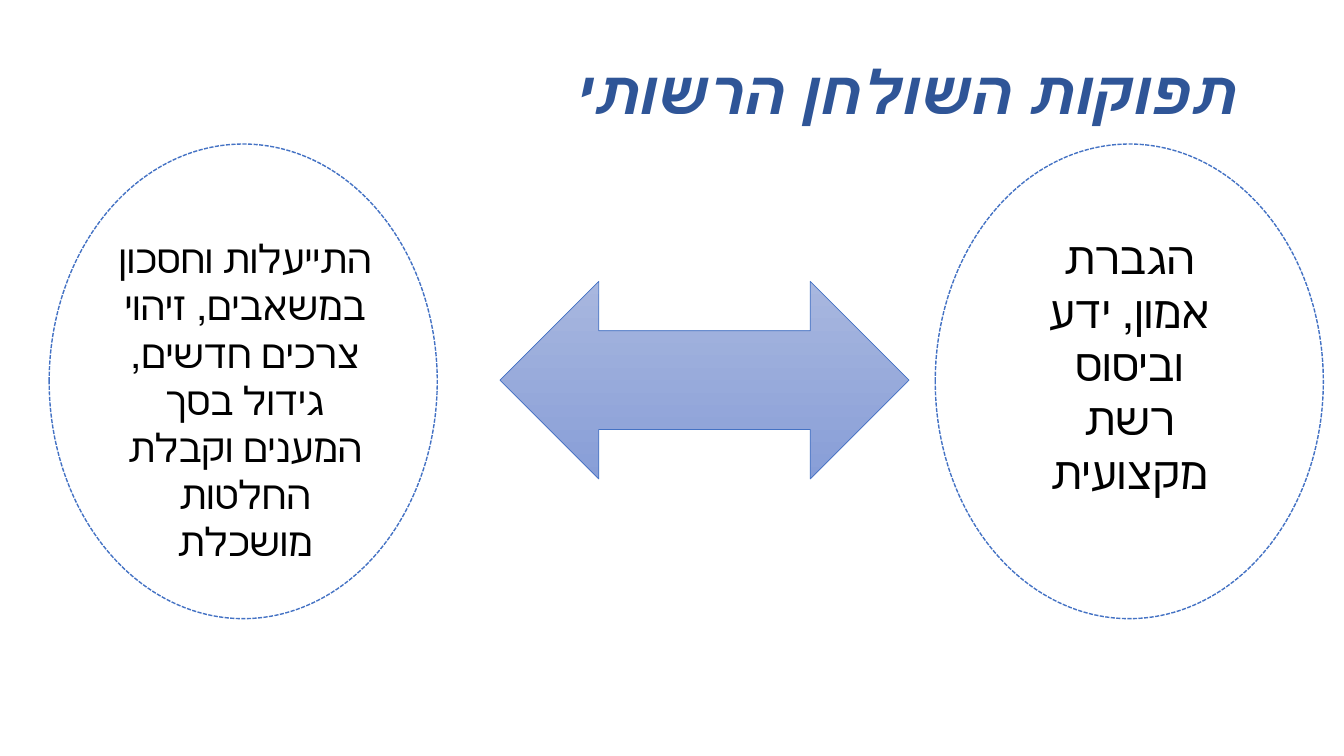
from dataclasses import dataclass

from pptx import Presentation
from pptx import util as u
from pptx.dml.color import RGBColor
from pptx.enum import dml, shapes, text

BLUE = "4472C4"
OVAL_TOP, OVAL_WIDTH, OVAL_HEIGHT = 3.63, 9.78, 11.96


@dataclass
class Box:
    left: float
    top: float
    width: float
    height: float

    def lengths(self) -> tuple:
        return tuple(u.Cm(v) for v in (self.left, self.top, self.width, self.height))


@dataclass
class Outcome:
    wording: str
    size: float
    oval_left: float
    box: Box


OUTCOMES = [
    Outcome("התייעלות וחסכון במשאבים, זיהוי צרכים חדשים, גידול בסך המענים וקבלת החלטות מושכלת",
            28, 1.24, Box(2.72, 5.79, 6.91, 8.64)),
    Outcome("הגברת אמון, ידע וביסוס רשת מקצועית",
            32, 23.57, Box(25.96, 5.66, 5, 8.13)),
]


def color(value: str) -> RGBColor:
    return RGBColor.from_string(value)


def add_text(slide, wording: str, box: Box, *, size: float, font: str = "Calibri",
             fill: str = "000000", bold: bool = False, italic: bool = False,
             anchor=text.MSO_ANCHOR.TOP, spacing: float = 1.0) -> None:
    """Add centred right-to-left text."""
    frame = slide.shapes.add_textbox(*box.lengths()).text_frame
    frame.word_wrap = True
    frame.vertical_anchor = anchor
    frame.margin_left = frame.margin_right = u.Cm(0.1)
    paragraph = frame.paragraphs[0]
    paragraph.alignment = text.PP_ALIGN.CENTER
    paragraph.line_spacing = spacing
    paragraph._p.get_or_add_pPr().set("rtl", "1")
    run = paragraph.add_run()
    run.text = wording
    run.font.size = u.Pt(size)
    run.font.name = font
    run.font.bold = bold
    run.font.italic = italic
    run.font.color.rgb = color(fill)


def add_outlined(slide, kind, box: Box, line_width: float):
    shape = slide.shapes.add_shape(kind, *box.lengths())
    shape.shadow.inherit = False
    shape.line.color.rgb = color(BLUE)
    shape.line.width = u.Pt(line_width)
    return shape


def add_outcome(slide, outcome: Outcome) -> None:
    oval = add_outlined(slide, shapes.MSO_SHAPE.OVAL,
                        Box(outcome.oval_left, OVAL_TOP, OVAL_WIDTH, OVAL_HEIGHT), 1)
    oval.fill.background()
    oval.line.dash_style = dml.MSO_LINE.SQUARE_DOT
    add_text(slide, outcome.wording, outcome.box, size=outcome.size)


def add_arrow(slide) -> None:
    arrow = add_outlined(slide, shapes.MSO_SHAPE.LEFT_RIGHT_ARROW,
                         Box(12.6, 7.09, 10.31, 4.98), 0.5)
    arrow.fill.gradient()
    arrow.fill.gradient_angle = 270
    for stop, shade in zip(arrow.fill.gradient_stops, ("A8B7DF", "889ED7")):
        stop.color.rgb = color(shade)


def main() -> None:
    deck = Presentation()
    deck.slide_width, deck.slide_height = u.Cm(33.87), u.Cm(19.05)
    slide = deck.slides.add_slide(deck.slide_layouts[6])

    # Title
    add_text(slide, "תפוקות השולחן הרשותי", Box(12.6, 0.56, 20.52, 3.68), size=43.2,
             font="Roboto", fill="2F5597", bold=True, italic=True,
             anchor=text.MSO_ANCHOR.MIDDLE, spacing=0.9)

    # Two outcomes joined by the arrow
    add_arrow(slide)
    for outcome in OUTCOMES:
        add_outcome(slide, outcome)

    deck.save("out.pptx")


if __name__ == "__main__":
    main()
